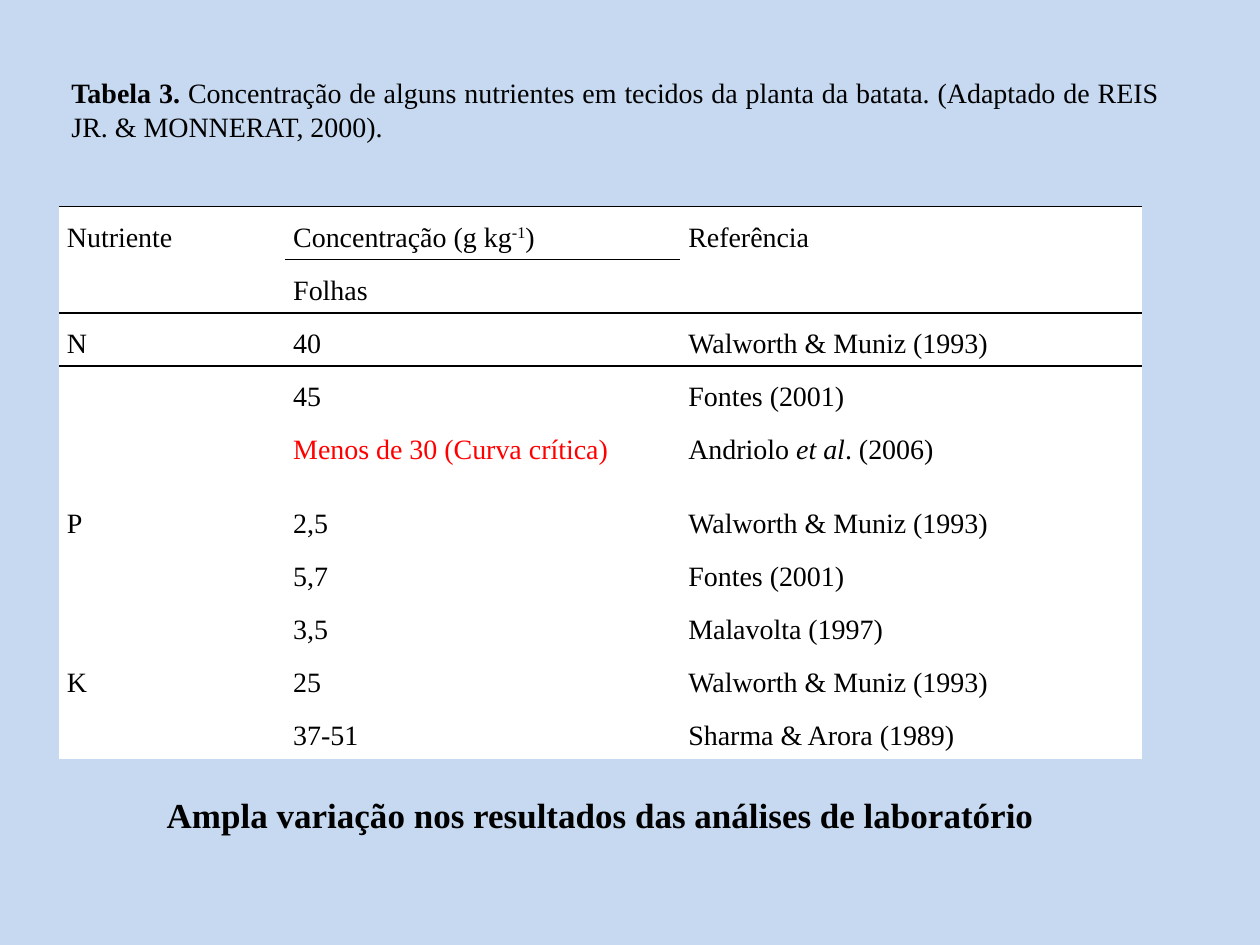
import dataclasses

import lxml.etree
import pptx
import pptx.dml.color
import pptx.enum.text
import pptx.oxml.ns
import pptx.util

Pt = pptx.util.Pt
Align = pptx.enum.text.PP_ALIGN
Anchor = pptx.enum.text.MSO_ANCHOR


@dataclasses.dataclass(frozen=True)
class Theme:
    font: str = "Times New Roman"
    background: str = "C6D9F1"
    cell: str = "FFFFFF"
    ink: str = "000000"
    alert: str = "FF0000"
    body: float = 16
    conclusion: float = 20
    rule: float = 1
    plain_table: str = "{2D5ABB26-0587-4C30-8999-92F81FD0307C}"


def rgb(value):
    return pptx.dml.color.RGBColor.from_string(value)


class SlideBuilder:
    def __init__(self, slide, theme):
        self.slide = slide
        self.theme = theme
        fill = slide.background.fill
        fill.solid()
        fill.fore_color.rgb = rgb(theme.background)

    def add_words(self, paragraph, content, size):
        pieces = [(content, "")] if isinstance(content, str) else content
        for words, style in pieces:
            run = paragraph.add_run()
            run.text = words
            run.font.name = self.theme.font
            run.font.size = Pt(size)
            run.font.bold = style == "bold"
            run.font.italic = style == "italic"
            color = self.theme.alert if style == "alert" else self.theme.ink
            run.font.color.rgb = rgb(color)
            if style == "superscript":
                run._r.get_or_add_rPr().set("baseline", "30000")

    def text(self, left, top, width, height, content, size, align, anchor):
        box = self.slide.shapes.add_textbox(Pt(left), Pt(top), Pt(width), Pt(height))
        frame = box.text_frame
        frame.word_wrap = True
        frame.auto_size = pptx.enum.text.MSO_AUTO_SIZE.SHAPE_TO_FIT_TEXT
        frame.vertical_anchor = anchor
        frame.paragraphs[0].alignment = align
        self.add_words(frame.paragraphs[0], content, size)

    def rule(self, cell, sides):
        properties = cell._tc.get_or_add_tcPr()
        for position, side in enumerate(sides):
            line = lxml.etree.Element(
                pptx.oxml.ns.qn(f"a:ln{side}"), w=str(Pt(self.theme.rule))
            )
            fill = lxml.etree.SubElement(line, pptx.oxml.ns.qn("a:solidFill"))
            lxml.etree.SubElement(
                fill, pptx.oxml.ns.qn("a:srgbClr"), val=self.theme.ink
            )
            properties.insert(position, line)

    def table(self, left, top, widths, heights, rows, spans, rules):
        grid = self.slide.shapes.add_table(
            len(heights), len(widths), Pt(left), Pt(top),
            Pt(sum(widths)), Pt(sum(heights)),
        ).table
        grid.first_row = grid.horz_banding = False
        grid._tbl.tblPr.find(
            pptx.oxml.ns.qn("a:tableStyleId")
        ).text = self.theme.plain_table
        for column, width in zip(grid.columns, widths):
            column.width = Pt(width)
        for row, height in zip(grid.rows, heights):
            row.height = Pt(height)
        for r, contents in enumerate(rows):
            for c, content in enumerate(contents):
                cell = grid.cell(r, c)
                cell.margin_left = cell.margin_right = Pt(4.5)
                cell.margin_top = cell.margin_bottom = 0
                cell.fill.solid()
                cell.fill.fore_color.rgb = rgb(self.theme.cell)
                self.rule(cell, rules.get(r, ""))
                if content:
                    paragraph = cell.text_frame.paragraphs[0]
                    paragraph.line_spacing = 1.5
                    self.add_words(paragraph, content, self.theme.body)
        for first, last in spans:
            grid.cell(*first).merge(grid.cell(*last))


def main():
    theme = Theme()
    deck = pptx.Presentation()
    deck.slide_width, deck.slide_height = Pt(720), Pt(540)
    builder = SlideBuilder(deck.slides.add_slide(deck.slide_layouts[6]), theme)

    left = 33.8
    builder.text(
        left, 450, 618.5, 31.5,
        [("Ampla variação nos resultados das análises de laboratório", "bold")],
        theme.conclusion, Align.CENTER, Anchor.TOP,
    )

    concentration = [("Concentração (g kg", ""), ("-1", "superscript"), (")", "")]
    critical = [("Menos de 30 (Curva crítica)", "alert")]
    andriolo = [("Andriolo ", ""), ("et al", "italic"), (". (2006)", "")]
    entries = [
        ("Nutriente", concentration, "Referência"),
        ("", "Folhas", ""),
        ("N", "40", "Walworth & Muniz (1993)"),
        ("", "45", "Fontes (2001)"),
        ("", critical, andriolo),
        ("P", "2,5", "Walworth & Muniz (1993)"),
        ("", "5,7", "Fontes (2001)"),
        ("", "3,5", "Malavolta (1997)"),
        ("K", "25", "Walworth & Muniz (1993)"),
        ("", "37-51", "Sharma & Arora (1989)"),
    ]
    rows = [(nutrient, leaves, "", source) for nutrient, leaves, source in entries]
    heights = [42 if leaves is critical else 30.4 for _, leaves, _ in entries]
    builder.table(
        left, 118, [129.3, 214, 11.4, 264], heights, rows,
        spans=[((0, 0), (1, 0)), ((0, 1), (0, 2)), ((0, 3), (1, 3))],
        rules={0: "TB", 1: "TB", 2: "T"},
    )

    builder.text(
        left, 39.6, 635.8, 46,
        [
            ("Tabela 3.", "bold"),
            (" Concentração de alguns nutrientes em tecidos da planta da batata. "
             "(Adaptado de REIS JR. & MONNERAT, 2000).", ""),
        ],
        theme.body, Align.JUSTIFY, Anchor.MIDDLE,
    )
    deck.save("out.pptx")


if __name__ == "__main__":
    main()
